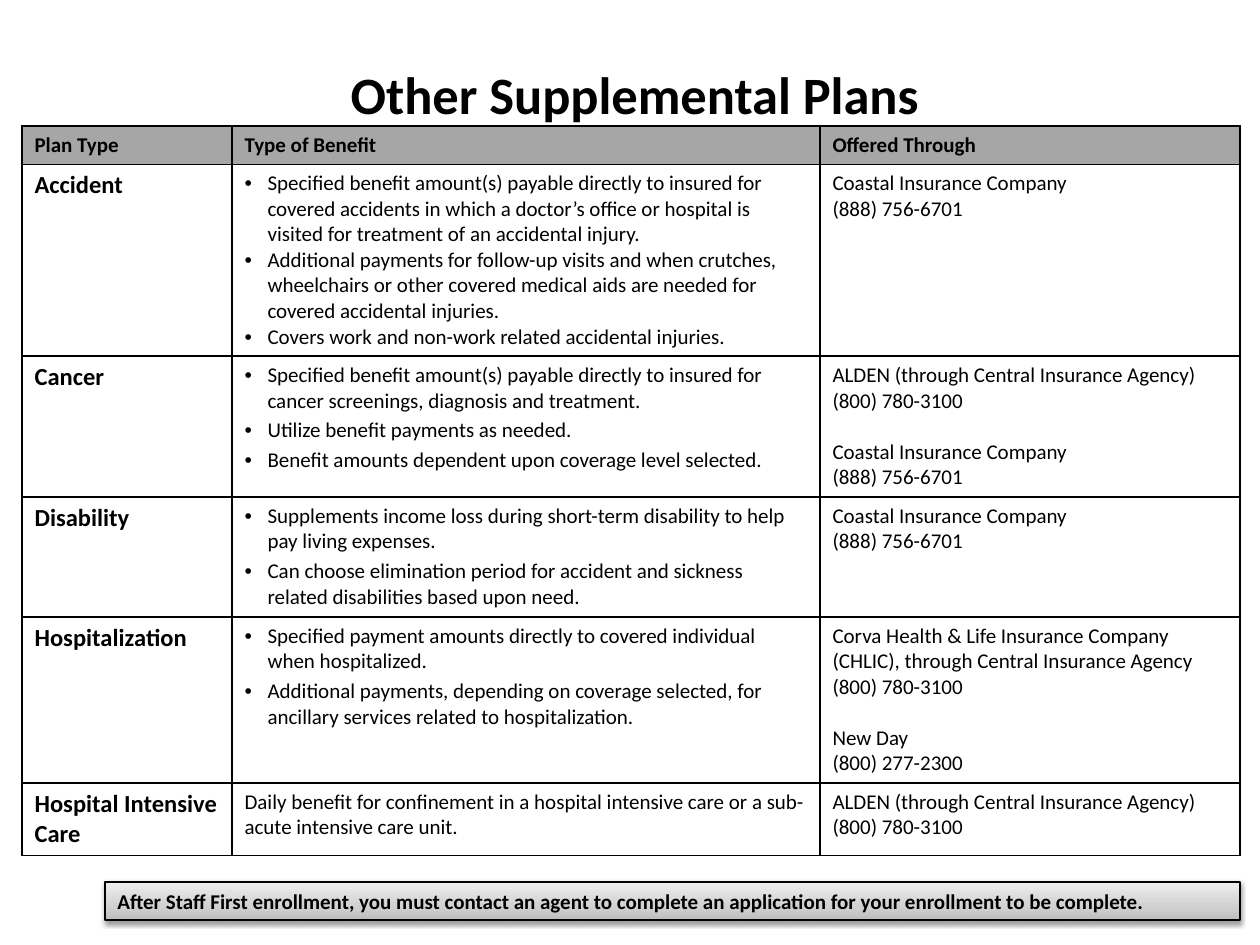
import copy

import lxml.etree
import pptx
import pptx.dml.color
import pptx.enum.shapes
import pptx.enum.text
import pptx.oxml
import pptx.oxml.ns
import pptx.util

PX = 914400 / 126
COLORS = {
    "text": "000000",
    "line": "000000",
    "header": "A6A6A6",
    "note_bottom": "BDBDBD",
    "note_middle": "D1D1D1",
    "note_top": "EEEEEE",
}
NAMESPACE = 'xmlns:a="http://schemas.openxmlformats.org/drawingml/2006/main"'
FORMATS = {
    "title": {"size": pptx.util.Pt(30), "bold": True},
    "header": {"size": pptx.util.Pt(12), "bold": True},
    "plan": {"size": pptx.util.Pt(14), "bold": True},
    "body": {"size": pptx.util.Pt(12), "bold": False},
}
COLUMN_WIDTHS = [210, 588, 420]
ROW_HEIGHTS = [38, 192, 140, 120, 166, 72]
LINE_GAP = 14.6

COASTAL = ["Coastal Insurance Company", "(888) 756-6701"]
ALDEN = ["ALDEN (through Central Insurance Agency)", "(800) 780-3100"]
CORVA = [
    "Corva Health & Life Insurance Company (CHLIC), through Central Insurance Agency",
    "(800) 780-3100",
]
NEW_DAY = ["New Day", "(800) 277-2300"]

HEADERS = ["Plan Type", "Type of Benefit", "Offered Through"]
PLANS = [
    ("Accident", 0, [
        "Specified benefit amount(s) payable directly to insured for covered accidents in which "
        "a doctor’s office or hospital is visited for treatment of an accidental injury.",
        "Additional payments for follow-up visits and when crutches, wheelchairs or other covered "
        "medical aids are needed for covered accidental injuries.",
        "Covers work and non-work related accidental injuries.",
    ], [COASTAL]),
    ("Cancer", 2.4, [
        "Specified benefit amount(s) payable directly to insured for cancer screenings, "
        "diagnosis and treatment.",
        "Utilize benefit payments as needed.",
        "Benefit amounts dependent upon coverage level selected.",
    ], [ALDEN, COASTAL]),
    ("Disability", 2.4, [
        "Supplements income loss during short-term disability to help pay living expenses.",
        "Can choose elimination period for accident and sickness related disabilities "
        "based upon need.",
    ], [COASTAL]),
    ("Hospitalization", 2.4, [
        "Specified payment amounts directly to covered individual when hospitalized.",
        "Additional payments, depending on coverage selected, for ancillary services related "
        "to hospitalization.",
    ], [CORVA, NEW_DAY]),
    ("Hospital Intensive Care", 0, [
        "Daily benefit for confinement in a hospital intensive care or a sub-acute "
        "intensive care unit.",
    ], [ALDEN]),
]


def px(length):
    return pptx.util.Emu(round(length * PX))


def write(frame, lines, style, bulleted=False):
    for index, (text, gap) in enumerate(lines):
        para = frame.paragraphs[0] if index == 0 else frame.add_paragraph()
        if bulleted:
            properties = para._p.get_or_add_pPr()
            properties.set("marL", str(px(23)))
            properties.set("indent", str(-px(23)))
            for tag in ('buFont {} typeface="Arial"', 'buChar {} char="•"'):
                properties.append(pptx.oxml.parse_xml(f"<a:{tag.format(NAMESPACE)}/>"))
        if index and gap:
            para.space_before = pptx.util.Pt(gap)
        span = para.add_run()
        span.text = text
        span.font.name = "Calibri"
        for name, value in FORMATS[style].items():
            setattr(span.font, name, value)
        span.font.color.rgb = pptx.dml.color.RGBColor.from_string(COLORS["text"])


deck = pptx.Presentation()
deck.slide_width = px(1260)
deck.slide_height = px(945)
page = deck.slides.add_slide(deck.slide_layouts[5])

title = page.shapes.title
for name, value in {"left": 10, "top": 73, "width": 1250, "height": 42}.items():
    setattr(title, name, px(value))
title.text_frame.vertical_anchor = pptx.enum.text.MSO_ANCHOR.MIDDLE
write(title.text_frame, [("Other Supplemental Plans", 0)], "title")
title.text_frame.paragraphs[0].alignment = pptx.enum.text.PP_ALIGN.CENTER

table = page.shapes.add_table(
    len(ROW_HEIGHTS), len(COLUMN_WIDTHS),
    px(22), px(126), px(sum(COLUMN_WIDTHS)), px(sum(ROW_HEIGHTS)),
).table
table.first_row = False
table.horz_banding = False
for column, width in zip(table.columns, COLUMN_WIDTHS):
    column.width = px(width)
for row, height in zip(table.rows, ROW_HEIGHTS):
    row.height = px(height)

for column, heading in enumerate(HEADERS):
    write(table.cell(0, column).text_frame, [(heading, 0)], "header")

for row, (plan, bullet_gap, benefits, providers) in enumerate(PLANS, start=1):
    write(table.cell(row, 0).text_frame, [(plan, 0)], "plan")
    write(table.cell(row, 1).text_frame, [(benefit, bullet_gap) for benefit in benefits],
          "body", len(benefits) > 1)
    contacts = [(text, 0 if index else LINE_GAP)
                for provider in providers for index, text in enumerate(provider)]
    write(table.cell(row, 2).text_frame, contacts, "body")

for index, cell in enumerate(table.iter_cells()):
    properties = cell._tc.get_or_add_tcPr()
    for side in ("lnL", "lnR", "lnT", "lnB"):
        properties.append(pptx.oxml.parse_xml(
            f'<a:{side} {NAMESPACE} w="12700"><a:solidFill>'
            f'<a:srgbClr val="{COLORS["line"]}"/></a:solidFill></a:{side}>'
        ))
    if index < len(HEADERS):
        cell.fill.solid()
        cell.fill.fore_color.rgb = pptx.dml.color.RGBColor.from_string(COLORS["header"])
    else:
        cell.fill.background()

note = page.shapes.add_shape(
    pptx.enum.shapes.MSO_SHAPE.RECTANGLE, px(105), px(882), px(1135), px(38)
)
note.fill.gradient()
note.fill.gradient_angle = 90
stop_list = note._element.spPr.find(".//" + pptx.oxml.ns.qn("a:gsLst"))
stop_list.insert(1, copy.deepcopy(stop_list[0]))
stops = [(0, "note_bottom"), (0.35, "note_middle"), (1, "note_top")]
for stop, (position, color) in zip(note.fill.gradient_stops, stops):
    stop.position = position
    stop.color.rgb = pptx.dml.color.RGBColor.from_string(COLORS[color])
note.line.color.rgb = pptx.dml.color.RGBColor.from_string(COLORS["line"])
note.line.width = pptx.util.Pt(0.75)
note.shadow.inherit = False
effects = note._element.spPr.find(pptx.oxml.ns.qn("a:effectLst"))
effects.append(pptx.oxml.parse_xml(
    f'<a:outerShdw {NAMESPACE} blurRad="39370" dist="20320" dir="5400000" rotWithShape="0">'
    f'<a:srgbClr val="{COLORS["line"]}"><a:alpha val="38000"/></a:srgbClr></a:outerShdw>'
))
note.text_frame.word_wrap = True
note.text_frame.vertical_anchor = pptx.enum.text.MSO_ANCHOR.TOP
write(note.text_frame, [(
    "After Staff First enrollment, you must contact an agent to complete an application "
    "for your enrollment to be complete.", 0)], "header")
note.text_frame.paragraphs[0].alignment = pptx.enum.text.PP_ALIGN.LEFT

deck.save("out.pptx")
